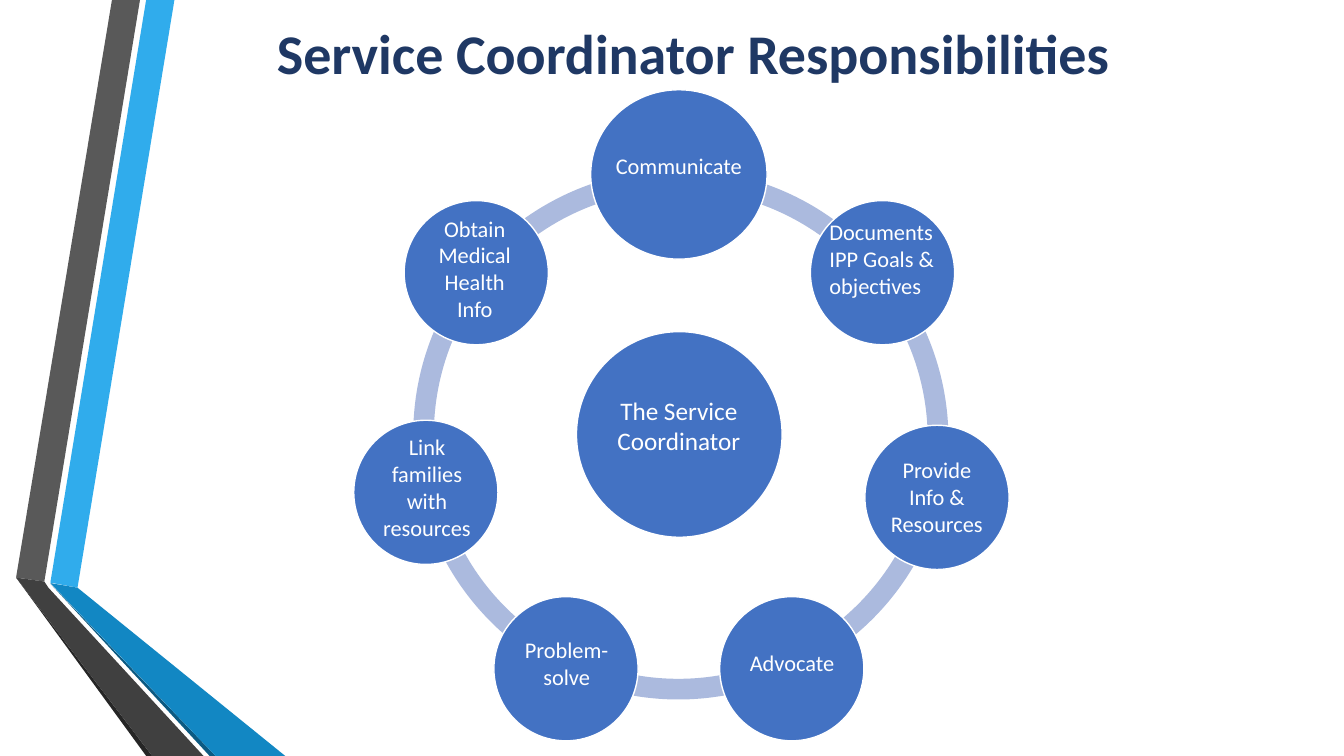
from dataclasses import dataclass

from pptx import Presentation
from pptx.dml.color import RGBColor
from pptx.enum.shapes import MSO_SHAPE
from pptx.enum.text import MSO_ANCHOR, PP_ALIGN
from pptx.util import Pt

WHITE = RGBColor(0xFF, 0xFF, 0xFF)
NAVY = RGBColor(0x1F, 0x38, 0x64)
BLUE = RGBColor(0x43, 0x72, 0xC3)
PALE = RGBColor(0xAB, 0xBA, 0xDE)
SKY = RGBColor(0x30, 0xAC, 0xEC)
OCEAN = RGBColor(0x12, 0x87, 0xC3)
DEEP = RGBColor(0x0C, 0x5A, 0x82)
GRAY = RGBColor(0x59, 0x59, 0x59)
DARK = RGBColor(0x40, 0x40, 0x40)
BLACK = RGBColor(0x26, 0x26, 0x26)

FONT = "Calibri"
RING = 378.72  # outer diameter of the ring
BAND = 0.039  # ring thickness as a share of its diameter
STEP = 360 / 7  # degrees between neighbouring outer circles
TOP = 270  # angle of the topmost circle
SMALL = 103


@dataclass
class Box:
    left: float
    top: float
    wide: float
    high: float

    def emu(self) -> tuple:
        return Pt(self.left), Pt(self.top), Pt(self.wide), Pt(self.high)


@dataclass
class Band:
    color: RGBColor
    points: list


@dataclass
class Arc:
    left: float
    top: float
    start: float
    end: float


@dataclass
class Node:
    disc: Box
    label: Box
    text: str
    size: float = 16
    align: PP_ALIGN = PP_ALIGN.CENTER


def small(left: float, top: float) -> Box:
    """Bounds of one of the equal outer circles."""
    return Box(left, top, SMALL, SMALL)


BANDS = [
    Band(SKY, [(36, 416.2), (55.4, 419.8), (124.6, 0), (104.4, 0)]),
    Band(GRAY, [(100, 0), (80, 0), (11.5, 412.6), (31.7, 415.4)]),
    Band(BLACK, [(11.5, 412.6), (104.4, 540), (108.7, 540)]),
    Band(DEEP, [(36, 416.9), (149.8, 540), (154.1, 540)]),
    Band(OCEAN, [(36, 416.5), (154.1, 540), (203.8, 540), (55.4, 419.8)]),
    Band(DARK, [(145.4, 540), (34.6, 419.8), (31.7, 415.4), (11.5, 412.6),
                (108.7, 540)]),
]

# Each arc runs from one outer circle to the next, so every seam is covered.
# The two arcs that meet the lowered right circle are set slightly apart.
ARCS = [Arc(295.2, 120.96, (TOP + i * STEP) % 360, (TOP + (i + 1) * STEP) % 360)
        for i in (0, 3, 4, 5, 6)]
ARCS += [Arc(300.2, 118.8, 14.51, 65.82), Arc(298.8, 124.56, 319.92, 12.64)]

NODES = [
    Node(Box(411.8, 236.9, 146.9, 146.9), Box(421.9, 278.6, 126, 51.1),
         "The Service Coordinator", 18),
    Node(Box(421.9, 64.1, 126, 121), Box(421.9, 105.1, 126, 26.6),
         "Communicate"),
    Node(small(578.9, 143.3), Box(585.4, 152.6, 90, 85),
         "Documents\nIPP Goals & objectives", align=PP_ALIGN.LEFT),
    Node(small(617.8, 303.8), Box(624.2, 322.6, 90, 65.5),
         "Provide Info &\nResources"),
    Node(small(514.1, 426.2), Box(528.5, 460.1, 84.2, 26.6),
         "Advocate", align=PP_ALIGN.LEFT),
    Node(small(352.8, 426.2), Box(365.8, 450.7, 77.8, 46.1),
         "Problem-solve"),
    Node(small(252.7, 300.2), Box(259, 306, 92, 85),
         "Link families with resources"),
    Node(small(288.7, 143.3), Box(300.2, 149.8, 77.8, 85),
         "Obtain Medical Health Info"),
]


def paint(shape, color: RGBColor) -> None:
    shape.shadow.inherit = False
    shape.fill.solid()
    shape.fill.fore_color.rgb = color
    shape.line.fill.background()


def add_band(slide, band: Band) -> None:
    points = [(Pt(x), Pt(y)) for x, y in band.points]
    form = slide.shapes.build_freeform(*points[0])
    form.add_line_segments(points[1:], close=True)
    paint(form.convert_to_shape(), band.color)


def add_arc(slide, arc: Arc) -> None:
    bounds = Box(arc.left, arc.top, RING, RING)
    shape = slide.shapes.add_shape(MSO_SHAPE.BLOCK_ARC, *bounds.emu())
    # An angle unit is 1/60000 degree; an adjustment unit is 1/100000.
    shape.adjustments[0] = arc.start * 0.6
    shape.adjustments[1] = arc.end * 0.6
    shape.adjustments[2] = BAND
    paint(shape, PALE)


def add_text(slide, box: Box, text: str, size: float, color: RGBColor,
             align: PP_ALIGN):
    frame = slide.shapes.add_textbox(*box.emu()).text_frame
    frame.word_wrap = True
    frame.text = text
    for para in frame.paragraphs:
        para.alignment = align
        for run in para.runs:
            run.font.name = FONT
            run.font.size = Pt(size)
            run.font.color.rgb = color
    return frame


def add_node(slide, node: Node) -> None:
    disc = slide.shapes.add_shape(MSO_SHAPE.OVAL, *node.disc.emu())
    paint(disc, BLUE)
    disc.line.color.rgb = WHITE
    disc.line.width = Pt(1)
    add_text(slide, node.label, node.text, node.size, WHITE, node.align)


def add_title(slide) -> None:
    frame = add_text(slide, Box(149.8, 13.7, 690.5, 53.3),
                     "Service Coordinator Responsibilities", 40, NAVY,
                     PP_ALIGN.CENTER)
    frame.vertical_anchor = MSO_ANCHOR.MIDDLE
    para = frame.paragraphs[0]
    para.line_spacing = 0.9
    para.runs[0].font.bold = True


def main() -> None:
    deck = Presentation()
    deck.slide_width, deck.slide_height = Pt(960), Pt(540)
    slide = deck.slides.add_slide(deck.slide_layouts[6])
    for band in BANDS:
        add_band(slide, band)
    for arc in ARCS:
        add_arc(slide, arc)
    for node in NODES:
        add_node(slide, node)
    add_title(slide)
    deck.save("out.pptx")


if __name__ == "__main__":
    main()
